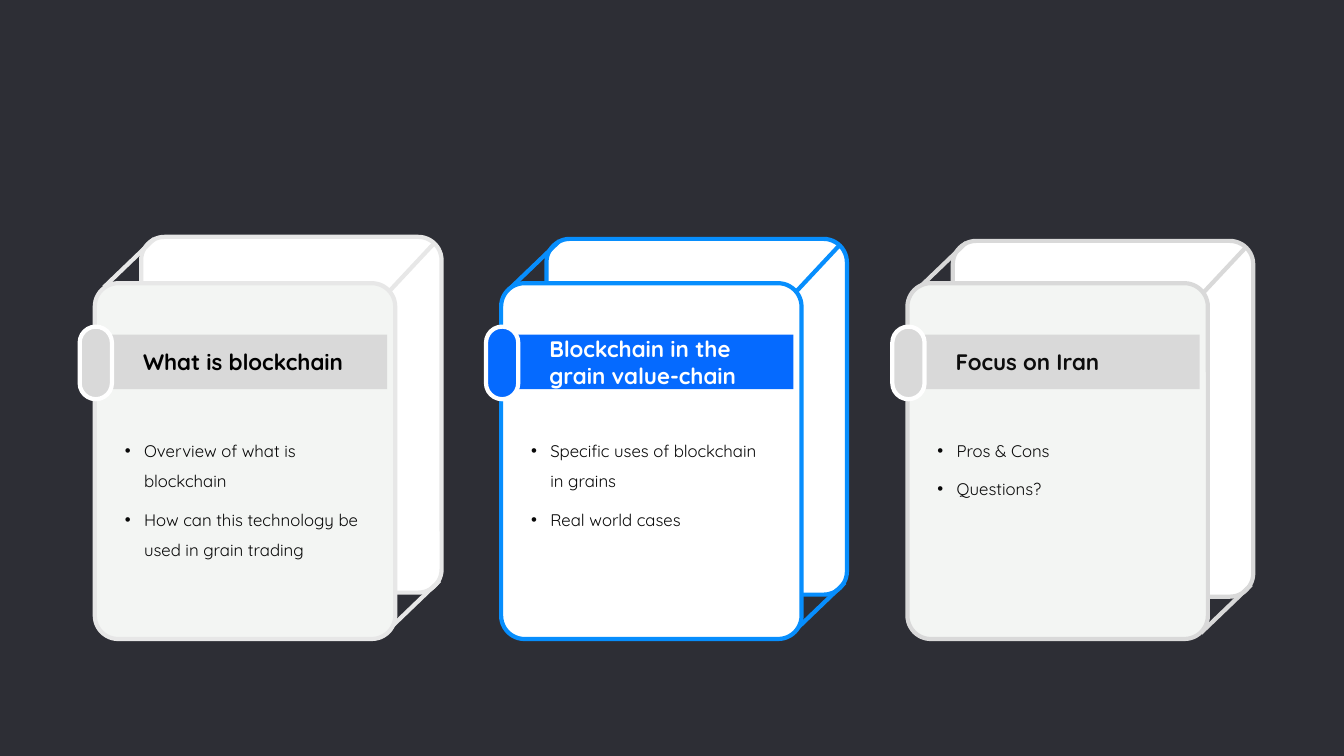
from dataclasses import dataclass

from lxml import etree
from pptx import Presentation
from pptx.dml.color import RGBColor
from pptx.enum.shapes import MSO_CONNECTOR, MSO_SHAPE
from pptx.enum.text import MSO_ANCHOR, MSO_AUTO_SIZE
from pptx.oxml.ns import qn
from pptx.util import Inches, Pt

RECTANGLE = MSO_SHAPE.RECTANGLE
ROUNDED = MSO_SHAPE.ROUNDED_RECTANGLE
STRAIGHT = MSO_CONNECTOR.STRAIGHT
MIDDLE = MSO_ANCHOR.MIDDLE
FIT_SHAPE = MSO_AUTO_SIZE.SHAPE_TO_FIT_TEXT

CARD_LEFT, CARD_PITCH, CARD_TOP = 0.94, 4.03, 2.81
CARD_WIDTH, CARD_HEIGHT, CARD_ROUNDING = 2.98, 3.53, 0.078
BAND_CENTER = 3.59
# Edges joining the two faces, measured from the corner of the back face
DEPTH_EDGES = [(-0.37, 0.5, 0.13, 0.02), (2.47, 0.53, 2.9, 0.07),
               (2.46, 3.89, 2.96, 3.41)]


@dataclass
class Card:
    title: str
    bullets: list
    back: tuple
    face: str
    edge: str
    accent: str
    title_color: str
    title_size: tuple
    body_size: tuple


CARDS = [
    Card("What is blockchain",
         ["Overview of what is blockchain",
          "How can this technology be used in grain trading"],
         (1.4, 2.35), "F3F5F3", "E7E7E7", "D9D9D9", "000000",
         (2.45, 0.37), (2.52, 1.36)),
    Card("Blockchain in the grain value-chain",
         ["Specific uses of blockchain in grains", "Real world cases"],
         (5.42, 2.37), "FFFFFF", "078EFD", "056AFF", "FFFFFF",
         (2.39, 0.64), (2.57, 1.06)),
    Card("Focus on Iran", ["Pros & Cons", "Questions?"],
         (9.45, 2.39), "F3F5F3", "D9D9D9", "D9D9D9", "0D0D0D",
         (2.09, 0.37), (2.26, 0.75)),
]


def color(value):
    return RGBColor.from_string(value)


class CardSlide:
    font_name = "Quicksand"
    line_width = Pt(3)
    body_color = "080808"
    indent = Inches(0.19)

    def __init__(self, presentation, background):
        self.slide = presentation.slides.add_slide(presentation.slide_layouts[6])
        fill = self.slide.background.fill
        fill.solid()
        fill.fore_color.rgb = color(background)

    def add_box(self, kind, left, top, width, height, fill, line=None, rounding=None):
        shape = self.slide.shapes.add_shape(
            kind, Inches(left), Inches(top), Inches(width), Inches(height))
        shape.shadow.inherit = False
        shape.fill.solid()
        shape.fill.fore_color.rgb = color(fill)
        if line:
            shape.line.color.rgb = color(line)
            shape.line.width = self.line_width
        else:
            shape.line.fill.background()
        if rounding is not None:
            shape.adjustments[0] = rounding

    def add_edge(self, x1, y1, x2, y2, line):
        connector = self.slide.shapes.add_connector(
            STRAIGHT, Inches(x1), Inches(y1), Inches(x2), Inches(y2))
        connector.line.color.rgb = color(line)
        connector.line.width = self.line_width
        etree.SubElement(connector._element.spPr, qn("a:effectLst"))

    def add_text(self, left, top, size, lines, points, text_color, bold=False):
        width, height = size
        box = self.slide.shapes.add_textbox(
            Inches(left), Inches(top), Inches(width), Inches(height))
        frame = box.text_frame
        frame.word_wrap = True
        frame.auto_size = FIT_SHAPE
        frame.text = "\n".join(lines)
        for paragraph in frame.paragraphs:
            paragraph.font.name = self.font_name
            paragraph.font.size = Pt(points)
            paragraph.font.bold = bold
            paragraph.font.color.rgb = color(text_color)
        return frame

    def add_bullets(self, left, top, size, lines):
        frame = self.add_text(left, top, size, lines, 12, self.body_color)
        for paragraph in frame.paragraphs:
            paragraph.line_spacing = 1.5
            paragraph.space_after = Pt(6)
            properties = paragraph._p.get_or_add_pPr()
            properties.set("marL", str(self.indent))
            properties.set("indent", str(-self.indent))
            bullet_font = etree.Element(qn("a:buFont"), typeface="Arial")
            bullet = etree.Element(qn("a:buChar"), char="•")
            properties.find(qn("a:spcAft")).addnext(bullet_font)
            bullet_font.addnext(bullet)

    def add_card(self, left, card):
        back_left, back_top = card.back
        self.add_box(ROUNDED, back_left, back_top, CARD_WIDTH, CARD_HEIGHT,
                     "FFFFFF", card.edge, CARD_ROUNDING)
        for x1, y1, x2, y2 in DEPTH_EDGES:
            self.add_edge(back_left + x1, back_top + y1,
                          back_left + x2, back_top + y2, card.edge)
        self.add_box(ROUNDED, left, CARD_TOP, CARD_WIDTH, CARD_HEIGHT,
                     card.face, card.edge, CARD_ROUNDING)
        self.add_box(RECTANGLE, left + 0.14, BAND_CENTER - 0.27, 2.76, 0.54, card.accent)
        self.add_bullets(left + 0.2, 4.22, card.body_size, card.bullets)
        title_top = BAND_CENTER - card.title_size[1] / 2
        title = self.add_text(left + 0.38, title_top, card.title_size, [card.title],
                              16, card.title_color, bold=True)
        title.vertical_anchor = MIDDLE
        self.add_box(ROUNDED, left - 0.15, BAND_CENTER - 0.35, 0.32, 0.72,
                     card.accent, "FFFFFF", 0.5)


def main():
    presentation = Presentation()
    presentation.slide_width = Inches(13.33)
    presentation.slide_height = Inches(7.5)
    card_slide = CardSlide(presentation, "2D2E35")
    for index, card in enumerate(CARDS):
        card_slide.add_card(CARD_LEFT + index * CARD_PITCH, card)
    presentation.save("out.pptx")


if __name__ == "__main__":
    main()
